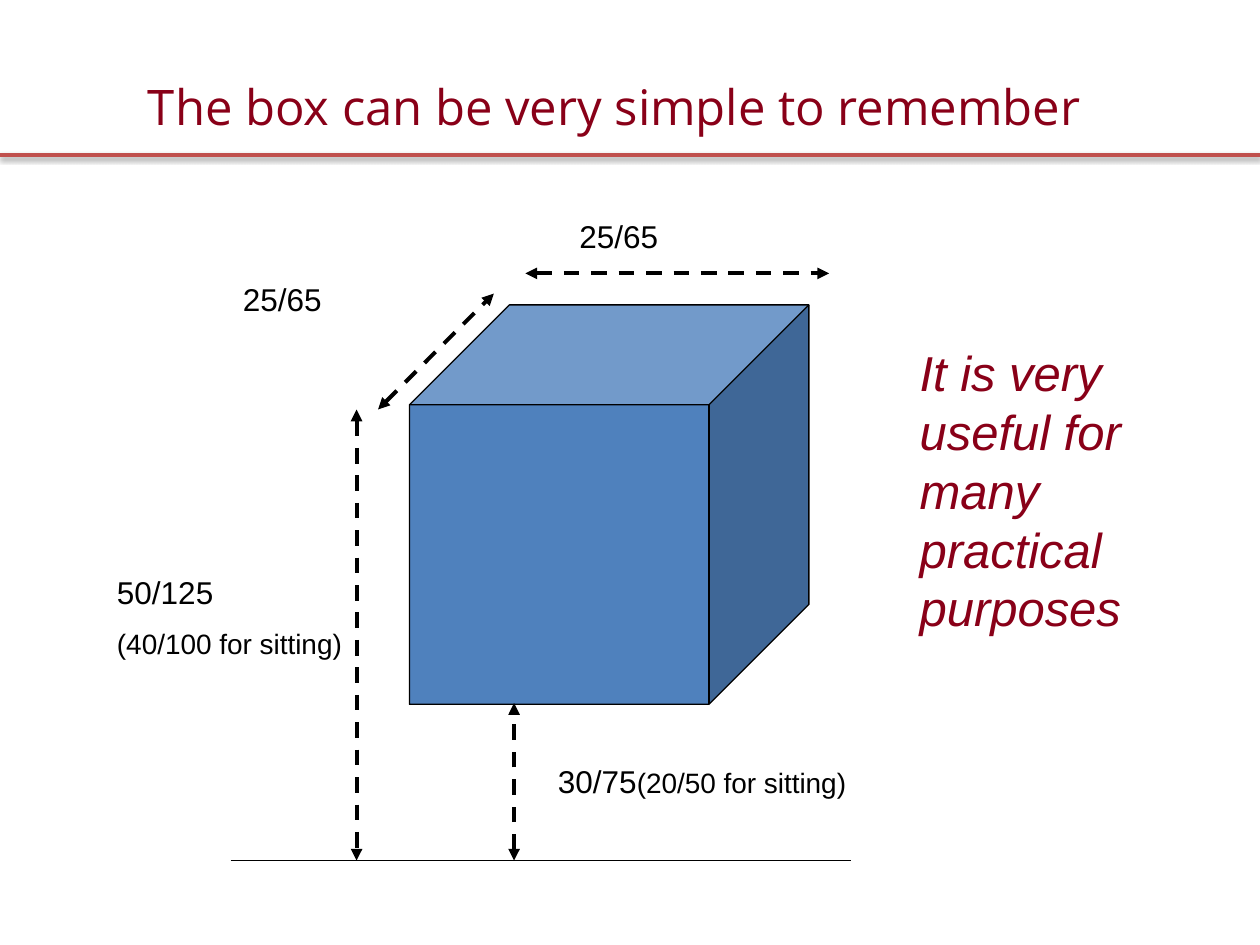
from lxml.etree import SubElement
from pptx import Presentation
from pptx.dml.color import RGBColor
from pptx.enum.dml import MSO_LINE
from pptx.enum.shapes import MSO_CONNECTOR, MSO_SHAPE
from pptx.enum.text import MSO_ANCHOR, MSO_AUTO_SIZE, PP_ALIGN
from pptx.oxml.ns import qn
from pptx.util import Inches, Pt

HUES = {"wine": "890018", "rule": "C0504D", "cube": "4F81BD", "ink": "000000"}


def add_line(home, ends, hue, width, arrows=False):
    line = home.add_connector(MSO_CONNECTOR.STRAIGHT, *[Inches(v) for v in ends])
    line.line.color.rgb = RGBColor.from_string(HUES[hue])
    line.line.width = Pt(width)
    if arrows:
        line.line.dash_style = MSO_LINE.DASH
        for tag in ("a:headEnd", "a:tailEnd"):
            SubElement(line.line._get_or_add_ln(), qn(tag), type="triangle")
    return SubElement(line._element.spPr, qn("a:effectLst"))


def add_run(para, text, size, hue="ink", face="Arial", slant=False):
    run = para.add_run()
    run.text = text
    run.font.name = face
    run.font.size = Pt(size)
    run.font.italic = slant
    run.font.color.rgb = RGBColor.from_string(HUES[hue])


deck = Presentation()
deck.slide_width, deck.slide_height = Inches(10), Inches(7.5)
slide = deck.slides.add_slide(deck.slide_layouts[5])

glow = add_line(slide.shapes, (0, 1.23, 10, 1.23), "rule", 2)
shade = SubElement(glow, qn("a:outerShdw"), blurRad="40000", dist="20000",
                   dir="5400000", rotWithShape="0")
tone = SubElement(shade, qn("a:srgbClr"), val=HUES["ink"])
SubElement(tone, qn("a:alpha"), val="38000")

title = slide.shapes.title
title.left, title.top = Inches(0.75), Inches(0.56)
title.width, title.height = Inches(8.25), Inches(0.67)
frame = title.text_frame
frame.auto_size = MSO_AUTO_SIZE.NONE
frame.vertical_anchor = MSO_ANCHOR.TOP
frame.paragraphs[0].alignment = PP_ALIGN.CENTER
add_run(frame.paragraphs[0], "The box can be very simple to remember", 28, "wine", "Open Sans")

group = slide.shapes.add_group_shape().shapes
cube = group.add_shape(MSO_SHAPE.CUBE, Inches(3.25), Inches(2.42), Inches(3.17), Inches(3.17))
cube.adjustments[0] = 0.25
cube.shadow.inherit = False
cube.fill.solid()
cube.fill.fore_color.rgb = RGBColor.from_string(HUES["cube"])
cube.line.color.rgb = RGBColor.from_string(HUES["ink"])
cube.line.width = Pt(0.75)

floor = 6.83
add_line(group, (1.83, floor, 6.75, floor), "ink", 0.75)
for ends in [
    (2.83, 3.25, 2.83, floor),
    (4.17, 2.17, 6.58, 2.17),
    (4.08, floor, 4.08, 5.58),
    (3, 3.25, 3.92, 2.33),
]:
    add_line(group, ends, "ink", 2.25, True)

labels = [
    ((4.33, 6, 3.58, 0.5), [[("30/75", 18), ("(20/50 for sitting)", 16)]]),
    ((0.83, 4.5, 2.05, 0.91), [[("50/125", 18)], [("(40/100 for sitting)", 16)]]),
    ((1.83, 2.17, 1.83, 0.5), [[("25/65", 18)]]),
    ((4.5, 1.67, 2.08, 0.5), [[("25/65", 18)]]),
    ((7.2, 2.67, 2.25, 2.44),
     [[("It is very useful for many practical purposes", 28, "wine", "Arial", True)]]),
]
for spot, paras in labels:
    frame = slide.shapes.add_textbox(*[Inches(v) for v in spot]).text_frame
    frame.word_wrap = True
    for i, runs in enumerate(paras):
        para = frame.add_paragraph() if i else frame.paragraphs[0]
        if i:
            para.space_before = Pt(9)
        for run in runs:
            add_run(para, *run)

deck.save("out.pptx")
